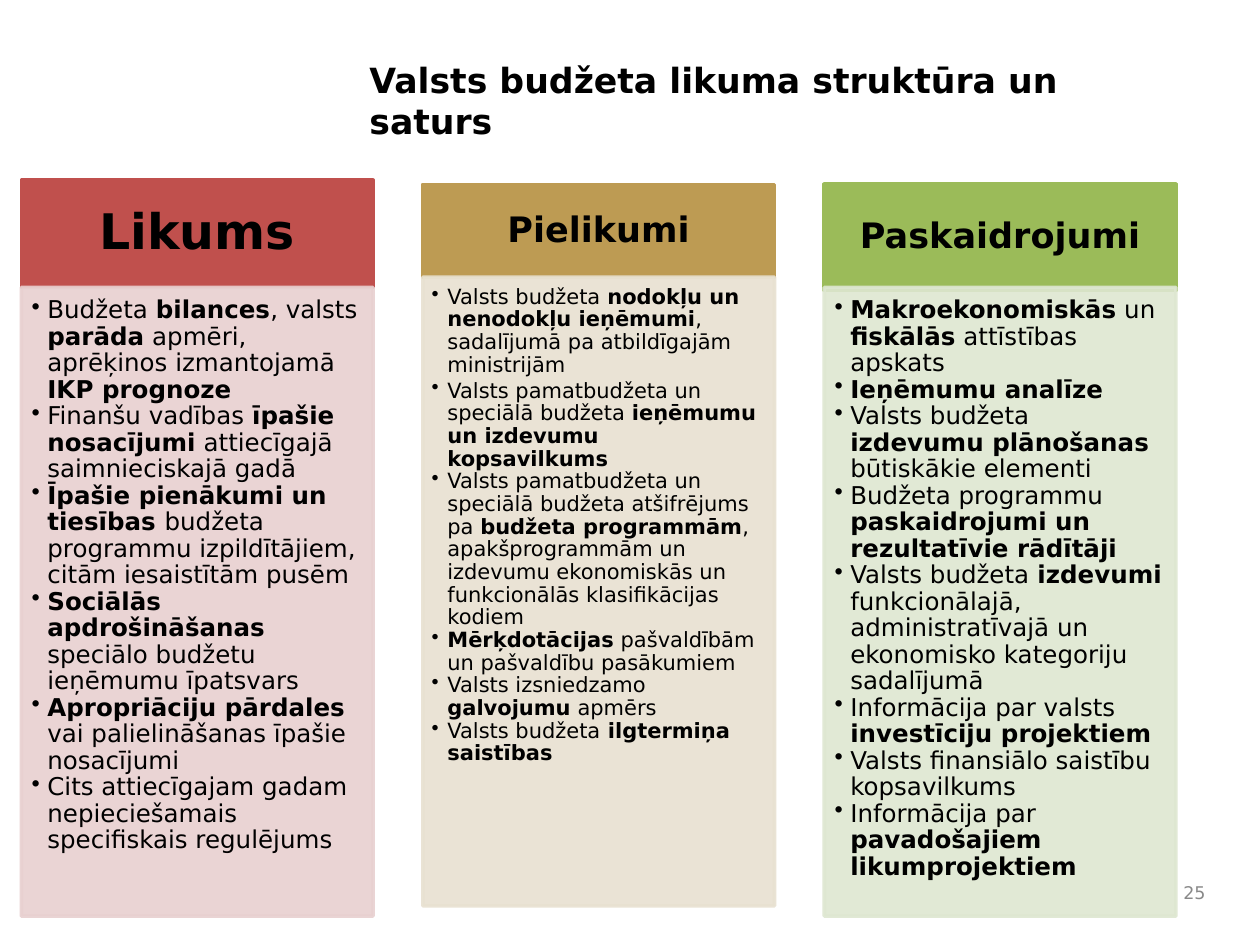
from dataclasses import dataclass
from typing import Any

from lxml.etree import SubElement
from pptx import Presentation
from pptx.dml.color import RGBColor
from pptx.enum.shapes import MSO_SHAPE as Preset
from pptx.enum.text import MSO_ANCHOR as Anchor, PP_ALIGN as Align
from pptx.oxml.ns import qn
from pptx.util import Pt

BLACK = RGBColor(0x00, 0x00, 0x00)
GRAY = RGBColor(0x89, 0x89, 0x89)
RED = RGBColor(0xC0, 0x50, 0x4D)
PINK = RGBColor(0xE8, 0xD0, 0xD0)
GOLD = RGBColor(0xBD, 0x9B, 0x53)
SAND = RGBColor(0xE8, 0xE1, 0xD1)
GREEN = RGBColor(0x9B, 0xBB, 0x59)
MINT = RGBColor(0xDE, 0xE7, 0xD1)

COLUMN_LEFT = 12.2
COLUMN_PITCH = 229.4
COLUMN_WIDTH = 201
BODY_HEIGHT = 359.3
INDENT = 9

LAW = [
    "Budžeta *bilances*, valsts *parāda* apmēri, aprēķinos izmantojamā *IKP prognoze*",
    "Finanšu vadības *īpašie nosacījumi* attiecīgajā saimnieciskajā gadā",
    "*Īpašie pienākumi un tiesības *budžeta programmu izpildītājiem, citām iesaistītām pusēm",
    "*Sociālās apdrošināšanas *speciālo budžetu ieņēmumu īpatsvars",
    "*Apropriāciju pārdales *vai palielināšanas īpašie nosacījumi",
    "Cits attiecīgajam gadam nepieciešamais specifiskais regulējums",
]
ANNEXES = [
    "Valsts budžeta *nodokļu un nenodokļu ieņēmumi*, sadalījumā pa atbildīgajām ministrijām",
    "Valsts pamatbudžeta un speciālā budžeta *ieņēmumu un izdevumu kopsavilkums*",
    "Valsts pamatbudžeta un speciālā budžeta atšifrējums pa *budžeta programmām*, "
    "apakšprogrammām un izdevumu ekonomiskās un funkcionālās klasifikācijas kodiem",
    "*Mērķdotācijas* pašvaldībām un pašvaldību pasākumiem",
    "Valsts izsniedzamo *galvojumu* apmērs",
    "Valsts budžeta* ilgtermiņa saistības*",
]
EXPLANATIONS = [
    "*Makroekonomiskās* un *fiskālās* attīstības apskats",
    "*Ieņēmumu analīze*",
    "Valsts budžeta *izdevumu plānošanas* būtiskākie elementi",
    "Budžeta programmu *paskaidrojumi un rezultatīvie rādītāji*",
    "Valsts budžeta *izdevumi* funkcionālajā, administratīvajā un "
    "ekonomisko kategoriju sadalījumā",
    "Informācija par valsts *investīciju projektiem*",
    "Valsts finansiālo saistību kopsavilkums",
    "Informācija par *pavadošajiem likumprojektiem*",
]


@dataclass
class SlideWriter:
    slide: Any
    font_name: str = "DejaVu Sans"
    line_width: float = 2
    line_spacing: float = 0.9

    def set_font(self, paragraph, size, color=BLACK, bold=None):
        font = paragraph.font
        font.name = self.font_name
        font.size = Pt(size)
        font.color.rgb = color
        font.bold = bold

    def set_frame(self, frame, insets, anchor):
        frame.word_wrap = True
        frame.vertical_anchor = anchor
        frame.margin_left, frame.margin_top, frame.margin_right, frame.margin_bottom = (
            Pt(inset) for inset in insets
        )

    def label(self, box, text, size, color=BLACK, bold=False,
              align=Align.LEFT, anchor=Anchor.TOP):
        frame = self.slide.shapes.add_textbox(*map(Pt, box)).text_frame
        self.set_frame(frame, (7.2, 3.6, 7.2, 3.6), anchor)
        paragraph = frame.paragraphs[0]
        paragraph.text = text
        paragraph.alignment = align
        self.set_font(paragraph, size, color, bold)

    def panel(self, box, color, insets, anchor, opacity=100):
        panel = self.slide.shapes.add_shape(Preset.RECTANGLE, *map(Pt, box))
        panel.shadow.inherit = False
        panel.fill.solid()
        panel.fill.fore_color.rgb = color
        panel.line.color.rgb = color
        panel.line.width = Pt(self.line_width)
        if opacity < 100:
            for tint in panel._element.spPr.iter(qn("a:srgbClr")):
                SubElement(tint, qn("a:alpha")).set("val", str(opacity * 1000))
        self.set_frame(panel.text_frame, insets, anchor)
        return panel.text_frame

    def heading(self, box, text, size, color):
        side, end = size * 0.56, size * 0.32
        frame = self.panel(box, color, (side, end, side, end), Anchor.MIDDLE)
        paragraph = frame.paragraphs[0]
        paragraph.text = text
        paragraph.alignment = Align.CENTER
        paragraph.line_spacing = self.line_spacing
        self.set_font(paragraph, size, bold=True)

    def bullets(self, box, items, size, color, first_gap):
        insets = [size * ratio for ratio in (0.42, 0.42, 0.56, 0.63)]
        frame = self.panel(box, color, insets, Anchor.TOP, opacity=90)
        for index, item in enumerate(items):
            paragraph = frame.add_paragraph() if index else frame.paragraphs[0]
            paragraph.level = 1
            paragraph.alignment = Align.LEFT
            paragraph.line_spacing = self.line_spacing
            paragraph.space_after = Pt(0 if index else first_gap)
            properties = paragraph._p.get_or_add_pPr()
            properties.set("marL", str(Pt(INDENT)))
            properties.set("indent", str(-Pt(INDENT)))
            SubElement(properties, qn("a:buChar")).set("char", "•")
            self.set_font(paragraph, size)
            for part, text in enumerate(item.split("*")):
                if text:
                    run = paragraph.add_run()
                    run.text = text
                    run.font.bold = part % 2 == 1


def main():
    deck = Presentation()
    deck.slide_width, deck.slide_height = Pt(720), Pt(540)
    writer = SlideWriter(deck.slides.add_slide(deck.slide_layouts[6]))

    writer.label((204, 30, 480, 52.6), "Valsts budžeta likuma struktūra un saturs",
                 19.8, bold=True)
    writer.label((663, 498, 33, 24), "25", 10, GRAY, align=Align.RIGHT, anchor=Anchor.MIDDLE)

    columns = [
        ("Likums", 28, RED, 103, 61, LAW, 14, PINK, 164.2, 0),
        ("Pielikumi", 20, GOLD, 105.3, 53.1, ANNEXES, 12, SAND, 158.4, 1.8),
        ("Paskaidrojumi", 20, GREEN, 105, 61, EXPLANATIONS, 14, MINT, 164.2, 0),
    ]
    for index, (name, name_size, name_color, top, height,
                items, item_size, item_color, body_top, first_gap) in enumerate(columns):
        left = COLUMN_LEFT + index * COLUMN_PITCH
        writer.heading((left, top, COLUMN_WIDTH, height), name, name_size, name_color)
        writer.bullets((left, body_top, COLUMN_WIDTH, BODY_HEIGHT),
                       items, item_size, item_color, first_gap)

    deck.save("out.pptx")


if __name__ == "__main__":
    main()
